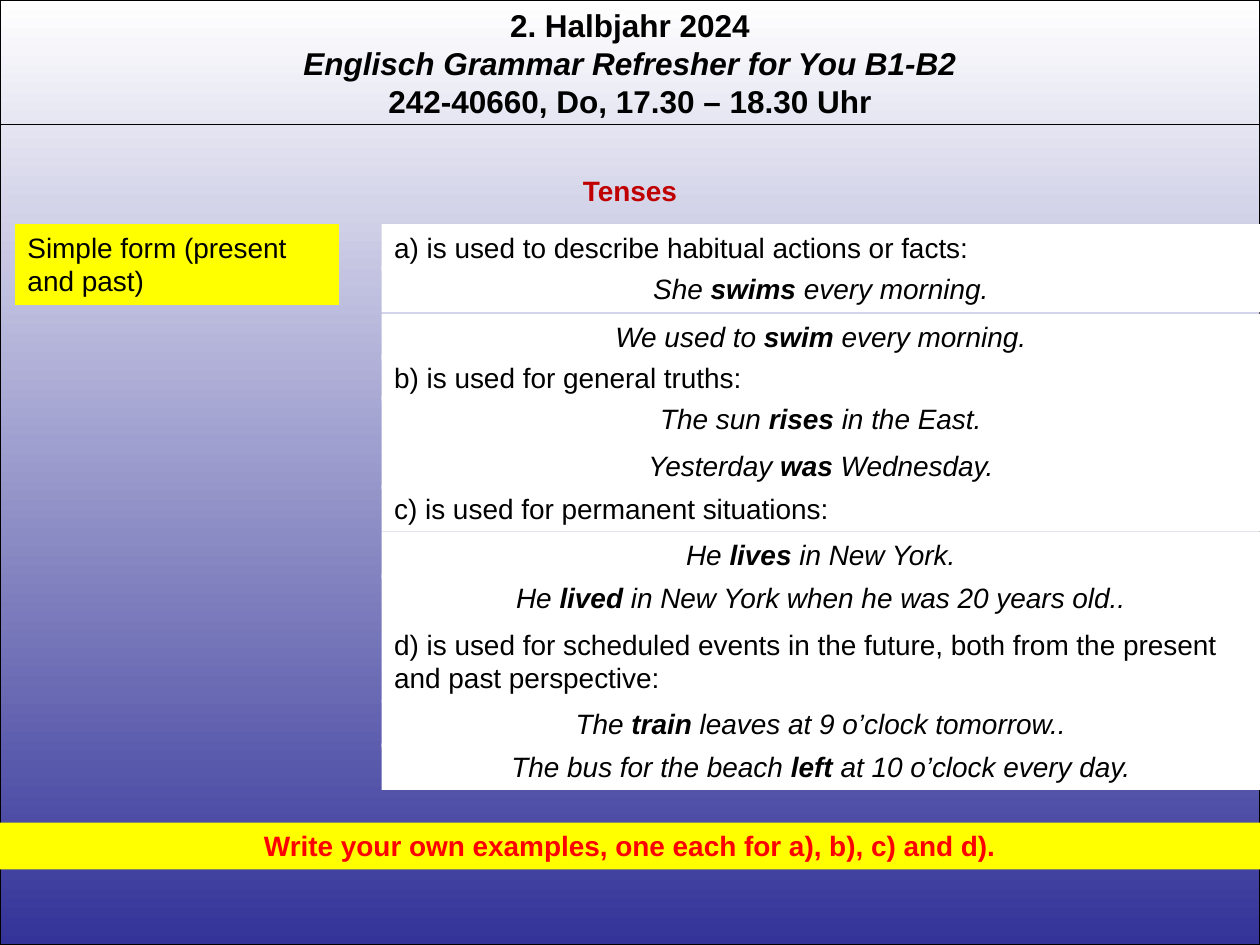
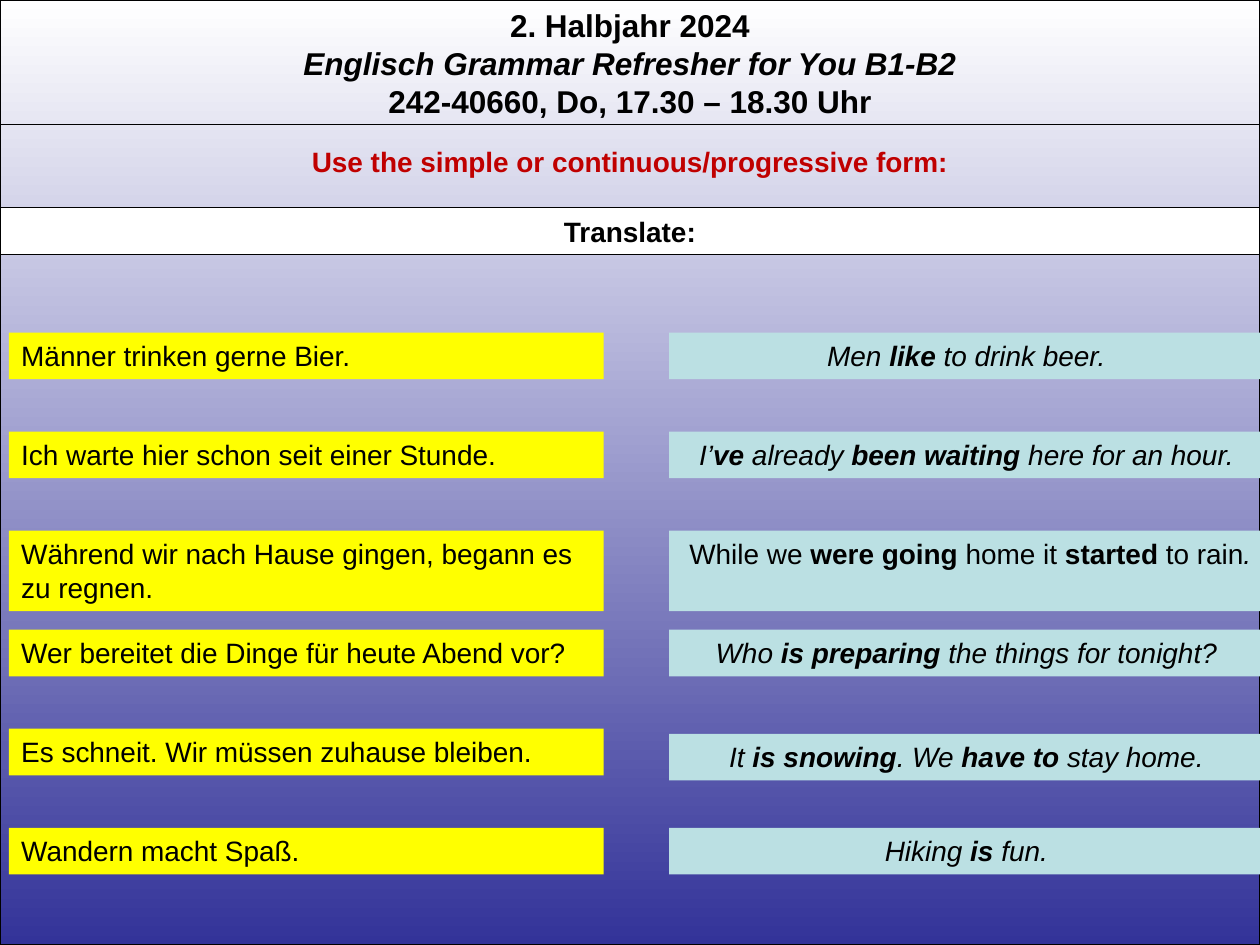
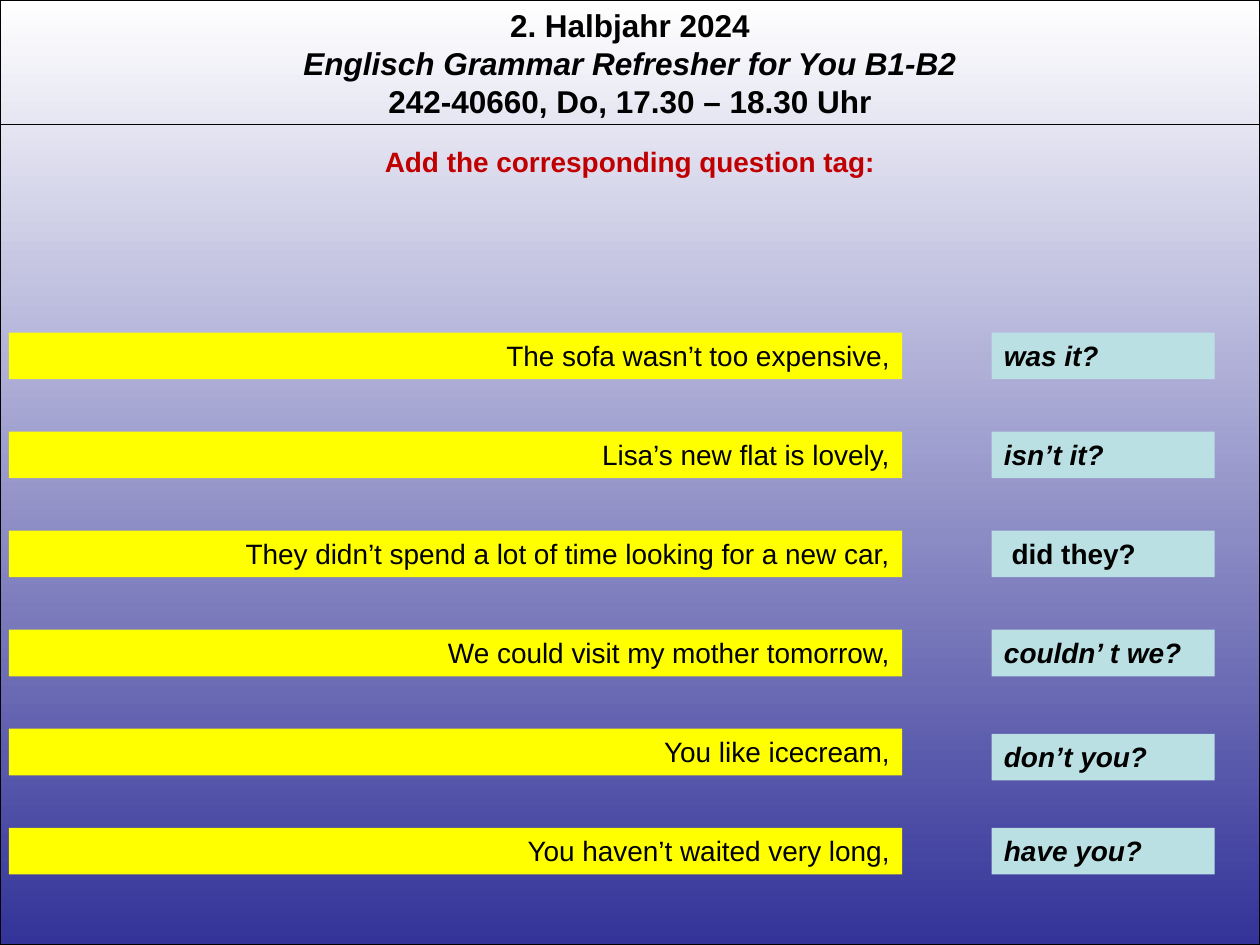
from dataclasses import dataclass

from pptx import Presentation
from pptx.dml.color import RGBColor as RGB
from pptx.enum.shapes import MSO_CONNECTOR as Connector, MSO_SHAPE as Shape
from pptx.enum.text import MSO_ANCHOR as Anchor, MSO_AUTO_SIZE as AutoSize, PP_ALIGN as Align
from pptx.oxml.ns import qn
from pptx.util import Inches, Pt


@dataclass(frozen=True)
class Theme:
    font: str = "Arial"
    heading_size: int = 18
    body_size: int = 16
    line_width: float = 0.75
    black: RGB = RGB(0x00, 0x00, 0x00)
    white: RGB = RGB(0xFF, 0xFF, 0xFF)
    indigo: RGB = RGB(0x33, 0x33, 0x99)
    title_red: RGB = RGB(0xC0, 0x00, 0x00)
    task_red: RGB = RGB(0xFF, 0x00, 0x00)
    yellow: RGB = RGB(0xFF, 0xFF, 0x00)
    answer_blue: RGB = RGB(0xBB, 0xE0, 0xE3)


THEME = Theme()
SLIDE_WIDTH, SLIDE_HEIGHT = 10, 7.5
ONE_LINE, TWO_LINES = 0.37, 0.64
RULE_TOP = 0.99

FIRST_ROW, LAST_ROW = 2.64, 6.57
ANSWER_SHIFTS = [0, 0, 0, 0, 0.04, 0]

COURSE_LINES = [
    "2. Halbjahr 2024",
    "_Englisch Grammar Refresher for You B1-B2_",
    "242-40660, Do, 17.30 – 18.30 Uhr",
]

# (top, height, text, is an example sentence)
SIMPLE_FORM_USES = [
    (1.78, ONE_LINE, "a) is used to describe habitual actions or facts:", False),
    (2.11, ONE_LINE, "She *swims* every morning.", True),
    (2.49, ONE_LINE, "We used to *swim* every morning.", True),
    (2.81, ONE_LINE, "b) is used for general truths:", False),
    (3.14, ONE_LINE, "The sun *rises* in the East.", True),
    (3.51, ONE_LINE, "Yesterday *was* Wednesday.", True),
    (3.85, ONE_LINE, "c) is used for permanent situations:", False),
    (4.22, ONE_LINE, "He *lives* in New York.", True),
    (4.56, ONE_LINE, "He *lived* in New York when he was 20 years old..", True),
    (4.93, TWO_LINES, "d) is used for scheduled events in the future, both from the present "
                      "and past perspective:", False),
    (5.56, ONE_LINE, "The *train* leaves at 9 o’clock tomorrow..", True),
    (5.90, ONE_LINE, "The bus for the beach *left* at 10 o’clock every day.", True),
]

TRANSLATIONS = [
    ("Männer trinken gerne Bier.", "_Men *like *to drink beer._"),
    ("Ich warte hier schon seit einer Stunde.",
     "_I’*ve *already *been waiting *here for an hour._"),
    ("Während wir nach Hause gingen, begann es zu regnen.",
     " While we *were going *home it *started* to rain_._"),
    ("Wer bereitet die Dinge für heute Abend vor?",
     "_Who *is preparing* the things for tonight?_"),
    ("Es schneit. Wir müssen zuhause bleiben.",
     "_It *is snowing*. We *have to *stay home._"),
    ("Wandern macht Spaß.", "_Hiking *is* fun._"),
]

QUESTION_TAGS = [
    ("The sofa wasn’t too expensive,", "_*was it?*_"),
    ("Lisa’s new flat is lovely,", "_*isn’t it?*_"),
    ("They didn’t spend a lot of time looking for a new car,", " *did they?*"),
    ("We could visit my mother tomorrow,", "_*couldn’ t we?*_"),
    ("You like icecream,", "_*don’t you?*_"),
    ("You haven’t waited very long,", "_*have you?*_"),
]


def add_marked_runs(paragraph, text):
    """Add runs to the paragraph; *stars* switch bold and _underscores_ italic."""
    italic = False
    for star_index, starred in enumerate(text.split("*")):
        for index, piece in enumerate(starred.split("_")):
            if index:
                italic = not italic
            if piece:
                run = paragraph.add_run()
                run.text = piece
                if star_index % 2:
                    run.font.bold = True
                if italic:
                    run.font.italic = True


def write(frame, lines, align=Align.LEFT, size=THEME.body_size, color=THEME.black, bold=None):
    frame.word_wrap = True
    frame.auto_size = AutoSize.NONE
    frame.vertical_anchor = Anchor.TOP
    for index, line in enumerate(lines):
        paragraph = frame.paragraphs[0] if index == 0 else frame.add_paragraph()
        paragraph.alignment = align
        font = paragraph.font
        font.name, font.size, font.bold = THEME.font, Pt(size), bold
        font.color.rgb = color
        add_marked_runs(paragraph, line)


def outline(line):
    line.color.rgb = THEME.black
    line.width = Pt(THEME.line_width)


def add_panel(slide, left, top, width, height, fill, text, outlined=False, **style):
    panel = slide.shapes.add_shape(
        Shape.RECTANGLE, Inches(left), Inches(top), Inches(width), Inches(height))
    panel.shadow.inherit = False
    panel.fill.solid()
    panel.fill.fore_color.rgb = fill
    if outlined:
        outline(panel.line)
    else:
        panel.line.fill.background()
    write(panel.text_frame, [text], **style)


def add_backdrop(slide):
    backdrop = slide.shapes.add_shape(
        Shape.RECTANGLE, 0, 0, Inches(SLIDE_WIDTH), Inches(SLIDE_HEIGHT))
    backdrop.shadow.inherit = False
    backdrop.fill.gradient()
    backdrop.fill.gradient_angle = 270
    for stop, color in zip(backdrop.fill.gradient_stops, (THEME.white, THEME.indigo)):
        stop.color.rgb = color
    outline(backdrop.line)
    return backdrop


def add_course_heading(slide):
    heading = slide.shapes.add_textbox(0, 0, Inches(SLIDE_WIDTH), Inches(1.01))
    write(heading.text_frame, COURSE_LINES, Align.CENTER, THEME.heading_size, bold=True)
    return heading


def add_rule(slide):
    rule = slide.shapes.add_connector(
        Connector.STRAIGHT, 0, Inches(RULE_TOP), Inches(SLIDE_WIDTH), Inches(RULE_TOP))
    outline(rule.line)
    properties = rule.element.spPr
    properties.append(properties.makeelement(qn("a:effectLst"), {}))
    return rule


def share_on_layout(layout, parts):
    """Move shapes from a slide to the back of its layout, with ids free there."""
    tree = layout.element.cSld.spTree
    for index, part in enumerate(parts):
        part.element.xpath(".//p:cNvPr")[0].set("id", str(100 + index))
        tree.insert(2 + index, part.element)


def add_titled_slide(prs, layout, title, top):
    slide = prs.slides.add_slide(layout)
    heading = slide.shapes.title
    heading.left, heading.top = 0, Inches(top)
    heading.width, heading.height = Inches(SLIDE_WIDTH), Inches(ONE_LINE)
    write(heading.text_frame, [title], Align.CENTER, color=THEME.title_red, bold=True)
    return slide


def add_exercise(slide, pairs, prompt_width, answer_left, answer_width,
                 prompt_align, answer_align, tall_row=None):
    """Set prompts at the left and their answers at the right in evenly spaced rows."""
    pitch = (LAST_ROW - FIRST_ROW) / (len(pairs) - 1)
    for row, ((prompt, answer), shift) in enumerate(zip(pairs, ANSWER_SHIFTS)):
        top = FIRST_ROW + row * pitch
        height = TWO_LINES if row == tall_row else ONE_LINE
        add_panel(slide, 0.07, top, prompt_width, height, THEME.yellow, prompt,
                  align=prompt_align)
        add_panel(slide, answer_left, top + shift, answer_width, height,
                  THEME.answer_blue, answer, align=answer_align)


def fill_tenses(slide):
    add_panel(slide, 0.12, 1.78, 2.57, TWO_LINES, THEME.yellow,
              "Simple form (present and past)")
    for top, height, text, is_example in SIMPLE_FORM_USES:
        add_panel(slide, 3.03, top, 6.97, height, THEME.white,
                  f"_{text}_" if is_example else text,
                  align=Align.CENTER if is_example else Align.LEFT)
    add_panel(slide, 0, 6.53, SLIDE_WIDTH, ONE_LINE, THEME.yellow,
              "Write your own examples, one each for a), b), c) and d).",
              align=Align.CENTER, color=THEME.task_red, bold=True)


def main():
    prs = Presentation()
    prs.slide_width, prs.slide_height = Inches(SLIDE_WIDTH), Inches(SLIDE_HEIGHT)
    title_only = prs.slide_layouts[5]

    tenses = add_titled_slide(prs, title_only, "Tenses", 1.33)
    share_on_layout(title_only, [
        add_backdrop(tenses), add_course_heading(tenses), add_rule(tenses)])
    fill_tenses(tenses)

    translate = add_titled_slide(
        prs, title_only, "Use the simple or continuous/progressive form:", 1.1)
    add_panel(translate, 0, 1.65, SLIDE_WIDTH, ONE_LINE, THEME.white, "Translate:",
              outlined=True, align=Align.CENTER, bold=True)
    add_exercise(translate, TRANSLATIONS, 4.72, 5.31, 4.72,
                 Align.LEFT, Align.CENTER, tall_row=2)

    tags = add_titled_slide(prs, title_only, "Add the corresponding question tag:", 1.1)
    add_exercise(tags, QUESTION_TAGS, 7.09, 7.87, 1.77, Align.RIGHT, Align.LEFT)

    prs.save("out.pptx")


if __name__ == "__main__":
    main()
